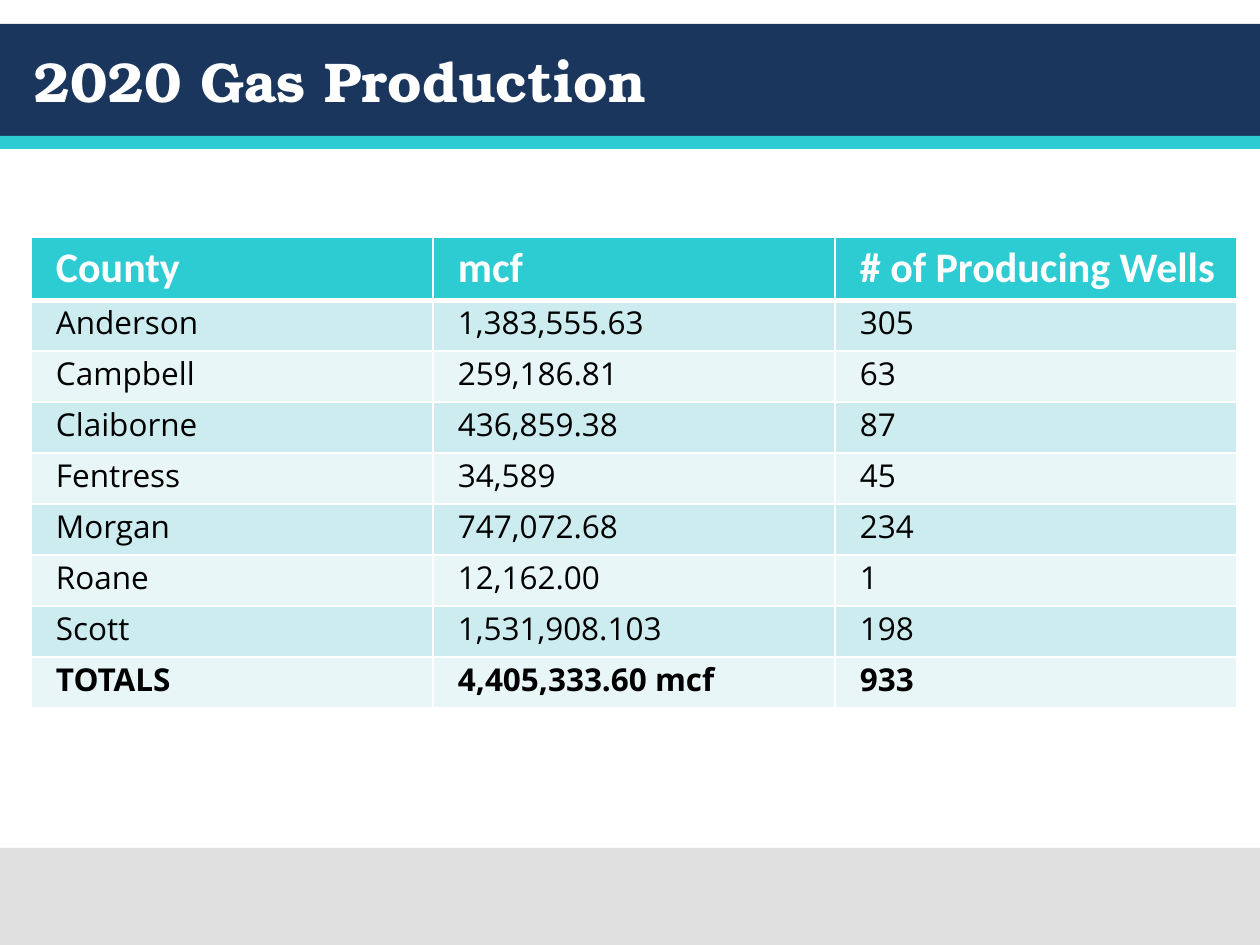
from lxml.etree import SubElement
from pptx import Presentation
from pptx.dml.color import RGBColor
from pptx.enum.shapes import MSO_SHAPE as Shape
from pptx.enum.text import MSO_ANCHOR as Anchor, MSO_AUTO_SIZE as AutoSize, PP_ALIGN as Align
from pptx.oxml.ns import qn
from pptx.util import Emu, Pt

PX = 914400 // 126  # EMU per pixel

NAVY = RGBColor(0x1B, 0x36, 0x5D)
TEAL = RGBColor(0x2D, 0xCC, 0xD3)
GREY = RGBColor(0xE0, 0xE0, 0xE0)
WHITE = RGBColor(0xFF, 0xFF, 0xFF)
BLACK = RGBColor(0x00, 0x00, 0x00)
ROW_FILLS = (RGBColor(0xCD, 0xEC, 0xEF), RGBColor(0xE8, 0xF6, 0xF7))

ROWS = [
    ("County", "mcf", "# of Producing Wells"),
    ("Anderson", "1,383,555.63", "305"),
    ("Campbell", "259,186.81", "63"),
    ("Claiborne", "436,859.38", "87"),
    ("Fentress", "34,589", "45"),
    ("Morgan", "747,072.68", "234"),
    ("Roane", "12,162.00", "1"),
    ("Scott", "1,531,908.103", "198"),
    ("TOTALS", "4,405,333.60 mcf", "933"),
]


def px(length):
    return Emu(length * PX)


def set_font(para, name, size, color, bold):
    font = para.font
    font.name, font.size, font.bold = name, Pt(size), bold
    font.color.rgb = color


def add_band(page, top, height, color):
    band = page.shapes.add_shape(Shape.RECTANGLE, 0, px(top), px(1260), px(height))
    band.shadow.inherit = False
    band.fill.solid()
    band.fill.fore_color.rgb = color
    band.line.fill.background()


def set_title(page, text):
    title = page.shapes.title
    title.left, title.top, title.width, title.height = px(21), px(24), px(1218), px(113)
    frame = title.text_frame
    frame.text = text
    frame.auto_size = AutoSize.NONE
    frame.vertical_anchor = Anchor.MIDDLE
    para = frame.paragraphs[0]
    para.alignment = Align.LEFT
    set_font(para, "TeX Gyre Bonum", 32, WHITE, True)
    # Bring the title in front of the bands
    page.shapes._spTree.append(title._element)


def set_borders(cell, top, bottom):
    props = cell._tc.get_or_add_tcPr()
    for side, width in (("L", 1), ("R", 1), ("T", top), ("B", bottom)):
        line = SubElement(props, qn(f"a:ln{side}"), w=str(Pt(width)))
        fill = SubElement(line, qn("a:solidFill"))
        SubElement(fill, qn("a:srgbClr"), val=str(WHITE))


def fill_cell(cell, text, row):
    header, total = row == 0, row == len(ROWS) - 1
    # Thick rule between header and body
    set_borders(cell, top=3 if row == 1 else 1, bottom=3 if header else 1)
    cell.fill.solid()
    cell.fill.fore_color.rgb = TEAL if header else ROW_FILLS[(row - 1) % 2]
    cell.margin_left = px(25)
    cell.margin_right = px(13 if header else 1)
    cell.margin_top = px(6 if header else 1)
    cell.margin_bottom = px(6 if header else 0)
    cell.text = text
    para = cell.text_frame.paragraphs[0]
    if header:
        set_font(para, "Calibri", 24, WHITE, True)
    else:
        set_font(para, "Open Sans", 18, BLACK, total)


def add_data_table(page):
    row_height, column_width = 51, 402
    columns = len(ROWS[0])
    table = page.shapes.add_table(
        len(ROWS), columns, px(31), px(237),
        px(column_width * columns), px(row_height * len(ROWS))).table
    for column in table.columns:
        column.width = px(column_width)
    for row, texts in enumerate(ROWS):
        table.rows[row].height = px(row_height)
        for column, text in enumerate(texts):
            fill_cell(table.cell(row, column), text, row)


def main():
    deck = Presentation()
    deck.slide_width, deck.slide_height = px(1260), px(945)
    page = deck.slides.add_slide(deck.slide_layouts[5])

    # Header and footer bands
    add_band(page, 24, 112, NAVY)
    add_band(page, 136, 13, TEAL)
    add_band(page, 848, 97, GREY)

    # Title and table
    set_title(page, "2020 Gas Production")
    add_data_table(page)
    deck.save("out.pptx")


if __name__ == "__main__":
    main()
